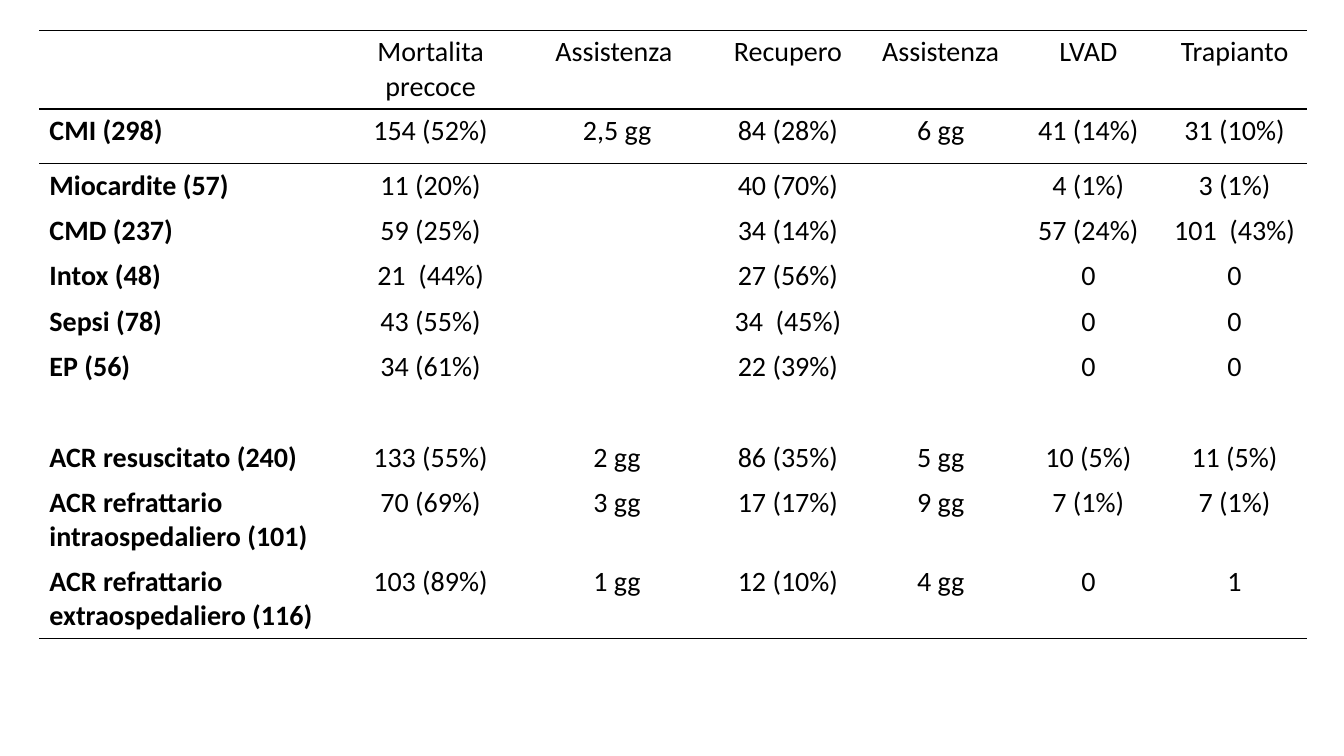
"""Build a slide with the outcome table of assisted patients by cause."""
from dataclasses import dataclass

from lxml.etree import SubElement
from pptx import Presentation
from pptx.dml.color import RGBColor
from pptx.enum.text import PP_ALIGN as Align
from pptx.oxml.ns import qn
from pptx.util import Inches, Pt

BLACK = RGBColor(0, 0, 0)
WHITE = RGBColor(255, 255, 255)
PLAIN_STYLE = "{2D5ABB26-0587-4C30-8999-92F81FD0307C}"
PAGE_WIDTH = Inches(13.33)
PAGE_HEIGHT = Inches(7.5)
TABLE_LEFT = 2.93
TABLE_TOP = 4
COLUMN_SHARES = (22.06, 14.1, 13.65, 11.78, 10.95, 11.03, 10.73)


@dataclass
class Row:
    """One table row with its height as a percentage of the page."""

    texts: tuple[str, ...]
    height: float = 6
    edges: tuple[str, ...] = ()


ROWS = (
    Row(("", "Mortalita precoce", "Assistenza ", "Recupero", "Assistenza", "LVAD", "Trapianto"),
        9.47, ("a:lnT", "a:lnB")),
    Row(("CMI (298)", "154 (52%)", "2,5 gg", "84 (28%)", "6 gg", "41 (14%)", "31 (10%)"),
        7.2, ("a:lnT",)),
    Row(("Miocardite (57)", "11 (20%)", "", "40 (70%)", "", "4 (1%)", "3 (1%)")),
    Row(("CMD (237)", "59 (25%)", "", "34 (14%)", "", "57 (24%)", "101  (43%)")),
    Row(("Intox (48)", "21  (44%)", "", "27 (56%)", "", "0", "0")),
    Row(("Sepsi (78)", "43 (55%)", "", "34  (45%)", "", "0", "0")),
    Row(("EP (56)", "34 (61%)", "", "22 (39%)", "", "0", "0")),
    Row(("",) * len(COLUMN_SHARES)),
    Row(("ACR resuscitato (240)", "133 (55%)", "2 gg", "86 (35%)", "5 gg", "10 (5%)", "11 (5%)")),
    Row(("ACR refrattario intraospedaliero (101)", "70 (69%)", "3 gg", "17 (17%)", "9 gg",
         "7 (1%)", "7 (1%)")),
    Row(("ACR refrattario extraospedaliero (116)", "103 (89%)", "1 gg", "12 (10%)", "4 gg",
         "0", "1"), edges=("a:lnB",)),
)


def across(share: float) -> int:
    """Turn a percentage of the page width into a length."""
    return round(PAGE_WIDTH * share / 100)


def down(share: float) -> int:
    """Turn a percentage of the page height into a length."""
    return round(PAGE_HEIGHT * share / 100)


def draw_edge(cell, edge: str) -> None:
    """Rule one edge of a cell in black."""
    line = SubElement(cell._tc.get_or_add_tcPr(), qn(edge), w=str(Pt(1)))
    fill = SubElement(line, qn("a:solidFill"))
    SubElement(fill, qn("a:srgbClr"), val=str(BLACK))


def fill_cell(cell, text: str, is_label: bool, edges: tuple[str, ...]) -> None:
    """Write and format one cell."""
    for edge in edges:
        draw_edge(cell, edge)
    cell.fill.solid()
    cell.fill.fore_color.rgb = WHITE
    cell.text = text
    para = cell.text_frame.paragraphs[0]
    para.alignment = Align.LEFT if is_label else Align.CENTER
    para.font.name = "Calibri"
    para.font.size = Pt(20)
    para.font.bold = is_label
    para.font.color.rgb = BLACK


def draw_table(page) -> None:
    """Draw the outcome table on the page."""
    frame = page.shapes.add_table(
        len(ROWS), len(COLUMN_SHARES), across(TABLE_LEFT), down(TABLE_TOP),
        across(sum(COLUMN_SHARES)), down(sum(row.height for row in ROWS)))
    table = frame.table
    table.first_row = table.horz_banding = False
    table._tbl.tblPr.find(qn("a:tableStyleId")).text = PLAIN_STYLE
    for column, share in zip(table.columns, COLUMN_SHARES):
        column.width = across(share)
    for table_row, row in zip(table.rows, ROWS):
        table_row.height = down(row.height)
        for index, (cell, text) in enumerate(zip(table_row.cells, row.texts)):
            fill_cell(cell, text, index == 0, row.edges)


def main() -> None:
    """Build and save the deck."""
    deck = Presentation()
    deck.slide_width = PAGE_WIDTH
    deck.slide_height = PAGE_HEIGHT
    draw_table(deck.slides.add_slide(deck.slide_layouts[6]))
    deck.save("out.pptx")


if __name__ == "__main__":
    main()
